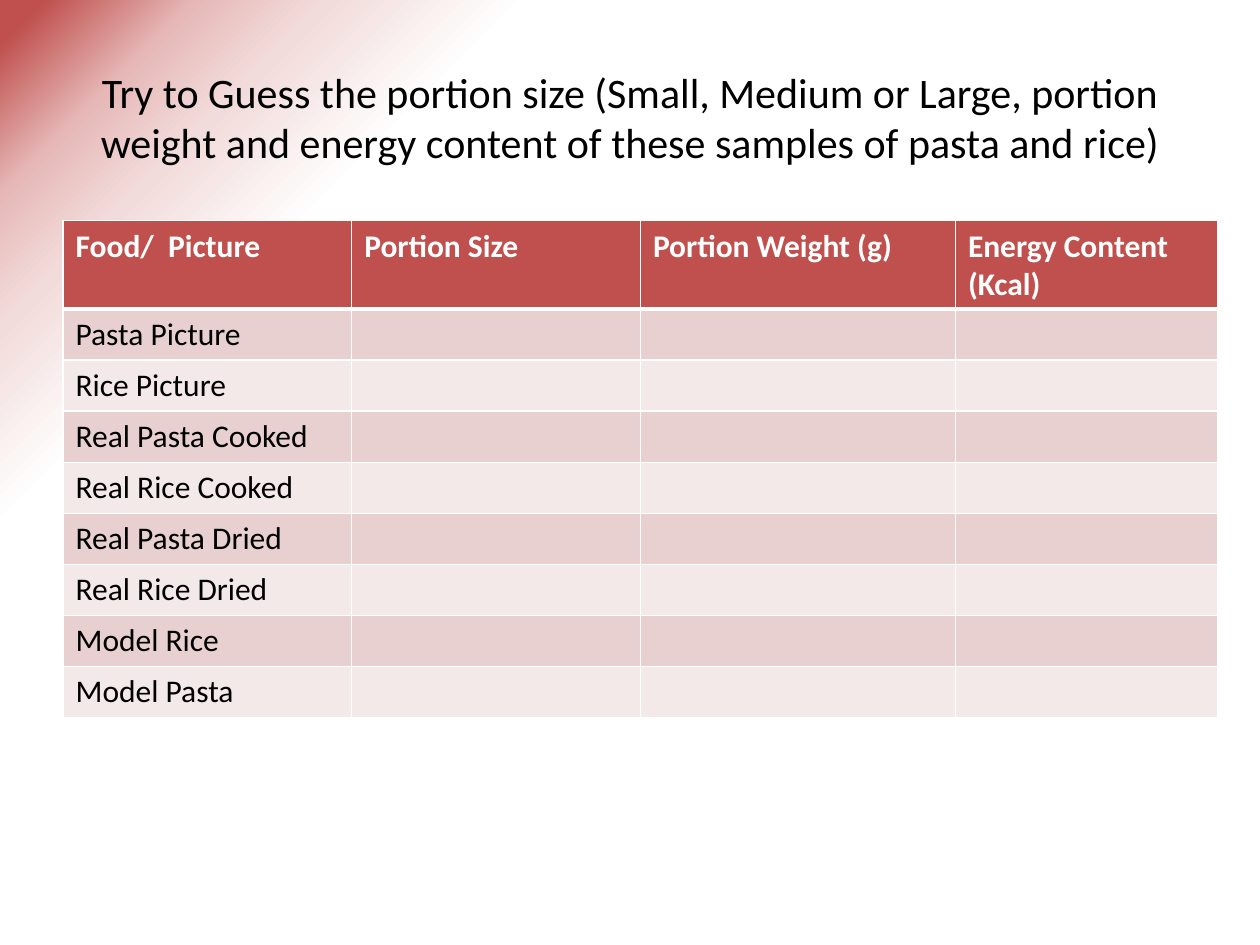
from dataclasses import dataclass

from pptx import Presentation
from pptx import util as u
from pptx.dml.color import RGBColor
from pptx.enum import text
from pptx.oxml import parse_xml
from pptx.oxml.ns import nsdecls

# Content
TITLE = ("Try to Guess the portion size (Small, Medium or Large, portion "
         "weight and energy content of these samples of pasta and rice)")
HEADERS = ("Food/  Picture", "Portion Size", "Portion Weight (g)", "Energy Content (Kcal)")
FOODS = ("Pasta Picture", "Rice Picture", "Real Pasta Cooked", "Real Rice Cooked",
         "Real Pasta Dried", "Real Rice Dried", "Model Rice", "Model Pasta")
COLUMN_WIDTHS = (5.82, 5.82, 6.35, 5.28)
ROW_HEIGHT = 1.03
LEFT = 1.27


@dataclass(frozen=True)
class Theme:
    font: str = "Calibri"
    title_size: int = 24
    table_size: int = 18
    ink: str = "000000"
    paper: str = "FFFFFF"
    accent: str = "C0504D"
    bands: tuple = ("E8D0D0", "F4E9E9")
    glow: tuple = ((76, "FFFFFF"), (85, "F2DCDB"), (91, "E6B9B8"), (98, "C0504D"))
    grid_line: int = 1
    header_line: int = 3


THEME = Theme()


def add_run(paragraph, words, size, color, bold=False):
    run = paragraph.add_run()
    run.text = words
    run.font.name = THEME.font
    run.font.size = u.Pt(size)
    run.font.bold = bold
    run.font.color.rgb = RGBColor.from_string(color)


def set_background(slide):
    """Radial glow whose strongest colour sits in the top left corner."""
    stops = "".join(f'<a:gs pos="{position * 1000}"><a:srgbClr val="{color}"/></a:gs>'
                    for position, color in THEME.glow)
    background = parse_xml(
        f'<p:bg {nsdecls("p", "a")}><p:bgPr><a:gradFill rotWithShape="1">'
        f'<a:gsLst>{stops}</a:gsLst><a:path path="circle">'
        '<a:fillToRect l="100000" t="100000"/></a:path></a:gradFill>'
        '<a:effectLst/></p:bgPr></p:bg>')
    slide.element.cSld.insert(0, background)


def add_title(slide):
    box = slide.shapes.add_textbox(u.Cm(LEFT), u.Cm(0.76), u.Cm(22.86), u.Cm(3.18))
    frame = box.text_frame
    frame.word_wrap = True
    frame.vertical_anchor = text.MSO_ANCHOR.MIDDLE
    paragraph = frame.paragraphs[0]
    paragraph.alignment = text.PP_ALIGN.CENTER
    add_run(paragraph, TITLE, THEME.title_size, THEME.ink)


def style_cell(cell, fill, top, bottom):
    properties = cell._tc.get_or_add_tcPr()
    widths = {"lnL": THEME.grid_line, "lnR": THEME.grid_line, "lnT": top, "lnB": bottom}
    for side, width in widths.items():
        properties.append(parse_xml(
            f'<a:{side} {nsdecls("a")} w="{u.Pt(width)}"><a:solidFill>'
            f'<a:srgbClr val="{THEME.paper}"/></a:solidFill></a:{side}>'))
    cell.fill.solid()
    cell.fill.fore_color.rgb = RGBColor.from_string(fill)


def add_food_table(slide):
    rows = [HEADERS] + [(food, "", "", "") for food in FOODS]
    table = slide.shapes.add_table(
        len(rows), len(HEADERS), u.Cm(LEFT), u.Cm(4.45),
        u.Cm(sum(COLUMN_WIDTHS)), u.Cm(ROW_HEIGHT * len(rows))).table
    for column, width in zip(table.columns, COLUMN_WIDTHS):
        column.width = u.Cm(width)
    for index, words in enumerate(rows):
        table.rows[index].height = u.Cm(ROW_HEIGHT)
        is_header = index == 0
        fill = THEME.accent if is_header else THEME.bands[(index - 1) % 2]
        color = THEME.paper if is_header else THEME.ink
        top = THEME.header_line if index == 1 else THEME.grid_line
        bottom = THEME.header_line if is_header else THEME.grid_line
        for cell, label in zip(table.rows[index].cells, words):
            style_cell(cell, fill, top, bottom)
            if label:
                add_run(cell.text_frame.paragraphs[0], label,
                        THEME.table_size, color, is_header)


def main():
    presentation = Presentation()
    presentation.slide_width, presentation.slide_height = u.Cm(25.4), u.Cm(19.05)
    slide = presentation.slides.add_slide(presentation.slide_layouts[6])
    set_background(slide)
    add_title(slide)
    add_food_table(slide)
    presentation.save("out.pptx")


if __name__ == "__main__":
    main()
